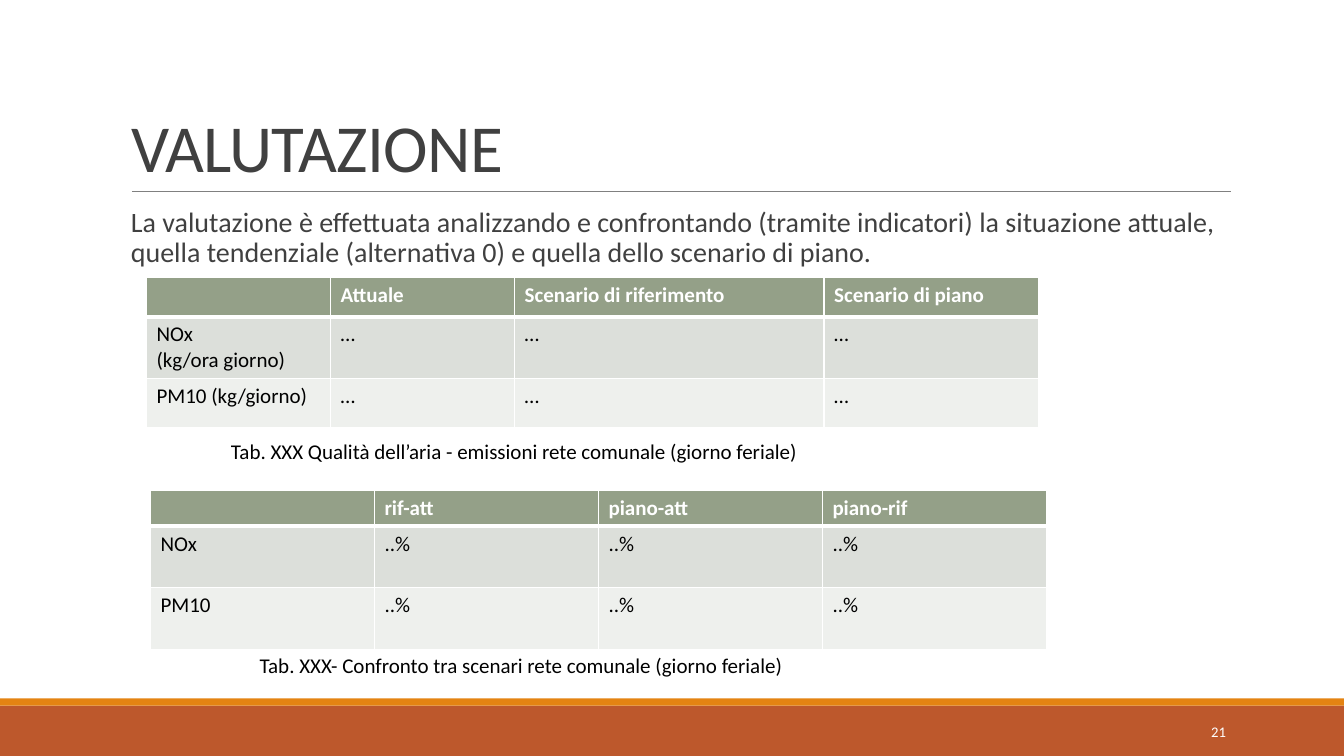
import dataclasses

import pptx
import pptx.dml.color
import pptx.enum.shapes
import pptx.enum.text
import pptx.oxml.ns
import pptx.util
from lxml import etree

Pt = pptx.util.Pt
Align = pptx.enum.text.PP_ALIGN
Anchor = pptx.enum.text.MSO_ANCHOR
qn = pptx.oxml.ns.qn


@dataclasses.dataclass(frozen=True)
class Theme:
    face: str = "Calibri"
    heading: str = "404040"
    ink: str = "000000"
    white: str = "FFFFFF"
    rule: str = "808080"
    footer: str = "BD582C"
    accent: str = "E48312"
    header_fill: str = "94A088"
    row_fills: tuple = ("DCDFDA", "EEF0ED")
    title_size: float = 48
    body_size: float = 20
    table_size: float = 15
    number_size: float = 10.5


THEME = Theme()


def rgb(colour):
    return pptx.dml.color.RGBColor.from_string(colour)


def style_paragraph(paragraph, size, colour, bold=False, align=Align.LEFT, spacing=None):
    paragraph.alignment = align
    paragraph.line_spacing = spacing
    paragraph.font.name = THEME.face
    paragraph.font.size = Pt(size)
    paragraph.font.bold = bold
    paragraph.font.color.rgb = rgb(colour)


def add_title(slide, wording):
    title = slide.shapes.title
    title.left, title.top, title.width, title.height = Pt(86.4), Pt(22.3), Pt(792), Pt(114.5)
    frame = title.text_frame
    frame.text = wording
    frame.auto_size = pptx.enum.text.MSO_AUTO_SIZE.NONE
    frame.vertical_anchor = Anchor.BOTTOM
    heading = frame.paragraphs[0]
    style_paragraph(heading, THEME.title_size, THEME.heading, spacing=0.85)
    heading._p.pPr.find(qn("a:defRPr")).set("spc", "-50")


def add_text(slide, wording, left, top, width, height, size, colour,
             align=Align.LEFT, anchor=Anchor.TOP, spacing=None, right_inset=7.2):
    frame = slide.shapes.add_textbox(Pt(left), Pt(top), Pt(width), Pt(height)).text_frame
    frame.word_wrap = True
    frame.vertical_anchor = anchor
    frame.margin_right = Pt(right_inset)
    frame.text = wording
    style_paragraph(frame.paragraphs[0], size, colour, align=align, spacing=spacing)


def add_caption(slide, wording, left, top):
    add_text(slide, wording, left, top, 525.6, 25.2, THEME.table_size, THEME.ink, Align.CENTER)


def add_bar(slide, top, height, colour):
    bar = slide.shapes.add_shape(
        pptx.enum.shapes.MSO_SHAPE.RECTANGLE, 0, Pt(top), Pt(960), Pt(height))
    bar.shadow.inherit = False
    bar.fill.solid()
    bar.fill.fore_color.rgb = rgb(colour)
    bar.line.fill.background()


def add_rule(slide, left, right, y):
    rule = slide.shapes.add_connector(
        pptx.enum.shapes.MSO_CONNECTOR.STRAIGHT, Pt(left), Pt(y), Pt(right), Pt(y))
    rule.line.color.rgb = rgb(THEME.rule)
    rule.line.width = Pt(0.5)
    etree.SubElement(rule._element.spPr, qn("a:effectLst"))


def add_borders(cell, top, bottom):
    properties = cell._tc.get_or_add_tcPr()
    for side, width in (("L", 1), ("R", 1), ("T", top), ("B", bottom)):
        border = etree.SubElement(properties, qn(f"a:ln{side}"), w=str(int(Pt(width))))
        fill = etree.SubElement(border, qn("a:solidFill"))
        etree.SubElement(fill, qn("a:srgbClr"), val=THEME.white)


def fill_cell(cell, wording, row):
    header = row == 0
    add_borders(cell, top=3 if row == 1 else 1, bottom=3 if header else 1)
    cell.fill.solid()
    cell.fill.fore_color.rgb = rgb(
        THEME.header_fill if header else THEME.row_fills[(row - 1) % 2])
    cell.text = wording
    for paragraph in cell.text_frame.paragraphs:
        style_paragraph(paragraph, THEME.table_size,
                        THEME.white if header else THEME.ink, bold=header)


def add_data_table(slide, left, top, widths, heights, rows):
    table = slide.shapes.add_table(
        len(heights), len(widths), Pt(left), Pt(top),
        Pt(sum(widths)), Pt(sum(heights))).table
    for column, width in zip(table.columns, widths):
        column.width = Pt(width)
    for row, (height, wordings) in enumerate(zip(heights, rows)):
        table.rows[row].height = Pt(height)
        for column, wording in enumerate(wordings):
            fill_cell(table.cell(row, column), wording, row)


def main():
    deck = pptx.Presentation()
    deck.slide_width, deck.slide_height = Pt(960), Pt(540)
    slide = deck.slides.add_slide(deck.slide_layouts.get_by_name("Title Only"))

    add_bar(slide, 504, 36, THEME.footer)
    add_bar(slide, 498.8, 5.2, THEME.accent)
    add_rule(slide, 94.3, 879, 136.8)
    add_title(slide, "VALUTAZIONE")
    add_text(slide, "La valutazione è effettuata analizzando e confrontando (tramite indicatori) "
             "la situazione attuale, quella tendenziale (alternativa 0) e quella dello scenario "
             "di piano.", 86.4, 145.4, 792, 52, THEME.body_size, THEME.heading,
             spacing=0.9, right_inset=0)
    add_text(slide, "21", 779.8, 508.3, 103, 28.8, THEME.number_size, THEME.white,
             Align.RIGHT, Anchor.MIDDLE)

    add_data_table(slide, 104.6, 198.3, (131.5, 131.5, 221, 153.5), (28, 44, 35), (
        ("", "Attuale", "Scenario di riferimento", "Scenario di piano"),
        ("NOx\n(kg/ora giorno)", *["…"] * 3),
        ("PM10 (kg/giorno)", *["…"] * 3)))
    add_caption(slide, "Tab. XXX Qualità dell’aria - emissioni rete comunale (giorno feriale)",
                104.4, 309.6)

    add_data_table(slide, 107.5, 350.3, (160,) * 4, (25.5, 44, 44), (
        ("", "rif-att", "piano-att", "piano-rif"),
        ("NOx", *["..%"] * 3),
        ("PM10", *["..%"] * 3)))
    add_caption(slide, "Tab. XXX- Confronto tra scenari rete comunale (giorno feriale)",
                109.4, 462.2)

    deck.save("out.pptx")


if __name__ == "__main__":
    main()
